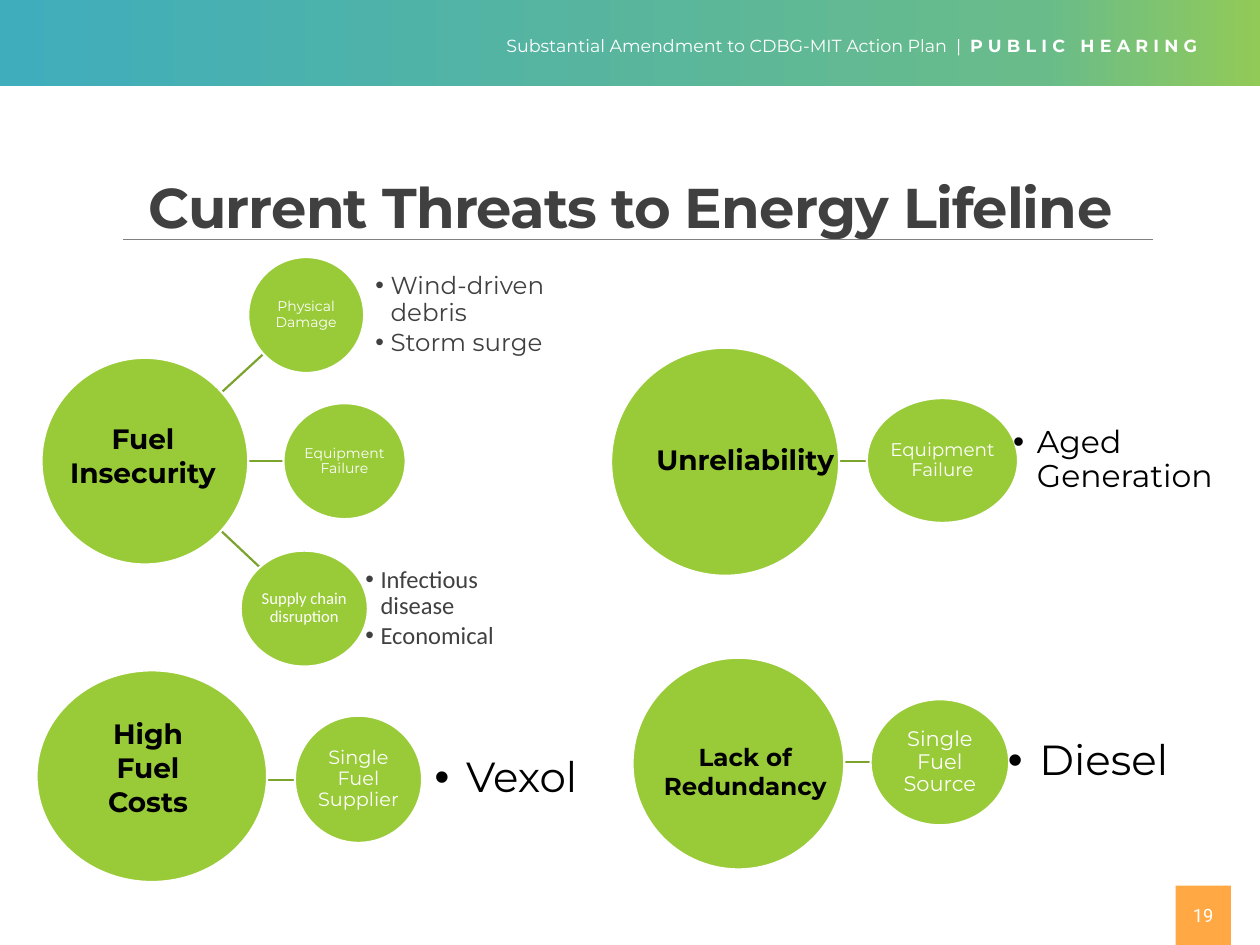
from lxml.etree import SubElement
from pptx import Presentation
from pptx.dml.color import RGBColor
from pptx.enum.shapes import MSO_CONNECTOR, MSO_SHAPE
from pptx.enum.text import MSO_ANCHOR, MSO_AUTO_SIZE, PP_ALIGN
from pptx.oxml.ns import qn
from pptx.util import Pt

PX = 9144  # 100 px to the inch
GREEN, WHITE, BLACK, GREY = "99CB38", "FFFFFF", "000000", "404040"
MAIN = "Montserrat"


def rgb(code):
    return RGBColor.from_string(code)


def style(frame, size, color, font=MAIN, bold=False, align=PP_ALIGN.CENTER,
          space=None, inset=None, anchor=MSO_ANCHOR.MIDDLE):
    """Format a whole text frame and each of its runs."""
    frame.word_wrap = True
    frame.auto_size = MSO_AUTO_SIZE.NONE
    frame.vertical_anchor = anchor
    if inset is not None:
        frame.margin_left = frame.margin_right = inset * PX
        frame.margin_top = frame.margin_bottom = inset * PX
    for para in frame.paragraphs:
        para.alignment = align
        if space:
            para.line_spacing = space
        for run in para.runs:
            run.font.size = Pt(size)
            run.font.name = font
            run.font.bold = bold
            run.font.color.rgb = rgb(color)


deck = Presentation()
deck.slide_width, deck.slide_height = 1000 * PX, 750 * PX
slide = deck.slides.add_slide(deck.slide_layouts[5])
shapes = slide.shapes

# Header band
band = shapes.add_shape(MSO_SHAPE.RECTANGLE, 0, 0, 1000 * PX, 68 * PX)
band.shadow.inherit = False
band.line.fill.background()
band.fill.gradient()
band.fill.gradient_angle = 0
stops = band.fill._fill._gradFill.gsLst
stops.clear()
for pos, code in [(0, "3FADBB"), (83, "69BC8A"), (100, "92CA58")]:
    stop = SubElement(stops, qn("a:gs"), pos=str(pos * 1000))
    SubElement(stop, qn("a:srgbClr"), val=code)

head = shapes.add_textbox(392 * PX, 23 * PX, 599 * PX, 27 * PX).text_frame
para = head.paragraphs[0]
para.text = "Substantial Amendment to CDBG-MIT Action Plan  |  "
event = para.add_run()
event.text = "PUBLIC HEARING"
style(head, 10, WHITE, align=PP_ALIGN.LEFT, anchor=MSO_ANCHOR.TOP)
event.font.bold = True
event.font._element.set("spc", "300")

# Title
title = shapes.title
title.left, title.top, title.width, title.height = 108 * PX, 140 * PX, 825 * PX, 56 * PX
title.text_frame.text = "Current Threats to Energy Lifeline"
style(title.text_frame, 32, GREY, bold=True, align=PP_ALIGN.LEFT, space=0.85)
title.text_frame.paragraphs[0].runs[0].font._element.set("spc", "-50")

# Page number
page = shapes.add_shape(MSO_SHAPE.RECTANGLE, 933 * PX, 703 * PX, 44 * PX, 47 * PX)
page.shadow.inherit = False
page.fill.solid()
page.fill.fore_color.rgb = rgb("FFA844")
page.line.fill.background()
page.text_frame.text = "19"
style(page.text_frame, 10.5, WHITE, font="Roboto", inset=0)

# Title rule, then the spokes, which the circles partly cover
lines = [
    (98, 190, 915, 190, "808080", 0.5),
    (173, 419, 206, 450, "7BA32D", 1.25),
    (173, 366, 225, 366, "7BA32D", 1.25),
    (173, 314, 209, 281, "7BA32D", 1.25),
    (639, 366, 688, 366, "7BA32D", 1.25),
    (645, 605, 691, 605, "7BA32D", 1.25),
    (179, 619, 234, 619, "7BA32D", 1.25),
]
for x1, y1, x2, y2, code, width in lines:
    line = shapes.add_connector(MSO_CONNECTOR.STRAIGHT, x1 * PX, y1 * PX, x2 * PX, y2 * PX)
    line.line.color.rgb = rgb(code)
    line.line.width = Pt(width)
    SubElement(line._element.spPr, qn("a:effectLst"))

# Circles: left, top, width, height, text, size, font
circles = [
    (33, 284, 164, 164, "", 0, MAIN),
    (197, 204, 92, 92, "Physical Damage", 8, MAIN),
    (225, 320, 97, 92, "Equipment Failure", 8, MAIN),
    (191, 437, 101, 92, "Supply chain disruption", 9.5, "Calibri"),
    (485, 276, 181, 181, "", 0, MAIN),
    (688, 316, 120, 99, "Equipment Failure", 10.5, MAIN),
    (502, 522, 168, 168, "", 0, MAIN),
    (691, 555, 110, 100, "Single Fuel Source", 12, MAIN),
    (29, 532, 183, 168, "", 0, MAIN),
    (234, 568, 101, 101, "Single Fuel Supplier", 11, MAIN),
]
for x, y, w, h, text, size, font in circles:
    disc = shapes.add_shape(MSO_SHAPE.OVAL, x * PX, y * PX, w * PX, h * PX)
    disc.shadow.inherit = False
    disc.fill.solid()
    disc.fill.fore_color.rgb = rgb(GREEN)
    disc.line.color.rgb = rgb(WHITE)
    disc.line.width = Pt(1.25)
    if text:
        disc.text_frame.text = text
        style(disc.text_frame, size, WHITE, font=font, space=0.9, inset=1)

# Threat names over the large circles
threats = [
    (35, 330, 157, 64, "Fuel Insecurity", 16),
    (506, 346, 171, 37, "Unreliability", 16),
    (508, 584, 167, 57, "Lack of Redundancy", 14),
    (52, 564, 131, 91, "High Fuel Costs", 16),
]
for x, y, w, h, text, size in threats:
    frame = shapes.add_textbox(x * PX, y * PX, w * PX, h * PX).text_frame
    frame.text = text
    style(frame, size, BLACK, bold=True, anchor=MSO_ANCHOR.TOP)

# Bullets: left, top, width, height, text, indent, size, colour, font
notes = [
    (298, 204, 138, 92, "Wind-driven debris\nStorm surge", 12, 14, GREY, MAIN),
    (290, 437, 152, 92, "Infectious disease\nEconomical", 12, 14, GREY, "Calibri"),
    (804, 316, 180, 99, "Aged Generation", 19, 18, BLACK, MAIN),
    (800, 555, 166, 100, "Diesel", 25, 24, BLACK, MAIN),
    (345, 568, 151, 101, "Vexol", 25, 24, BLACK, MAIN),
]
for x, y, w, h, text, indent, size, code, font in notes:
    frame = shapes.add_textbox(x * PX, y * PX, w * PX, h * PX).text_frame
    frame.text = text
    for para in frame.paragraphs:
        props = para._p.get_or_add_pPr()
        props.set("marL", str(indent * PX))
        props.set("indent", str(-indent * PX))
        SubElement(props, qn("a:buFont"), typeface="Arial")
        SubElement(props, qn("a:buChar"), char="•")
        para.space_after = Pt(2)
    style(frame, size, code, font=font, align=PP_ALIGN.LEFT, space=0.9, inset=0)

deck.save("out.pptx")
